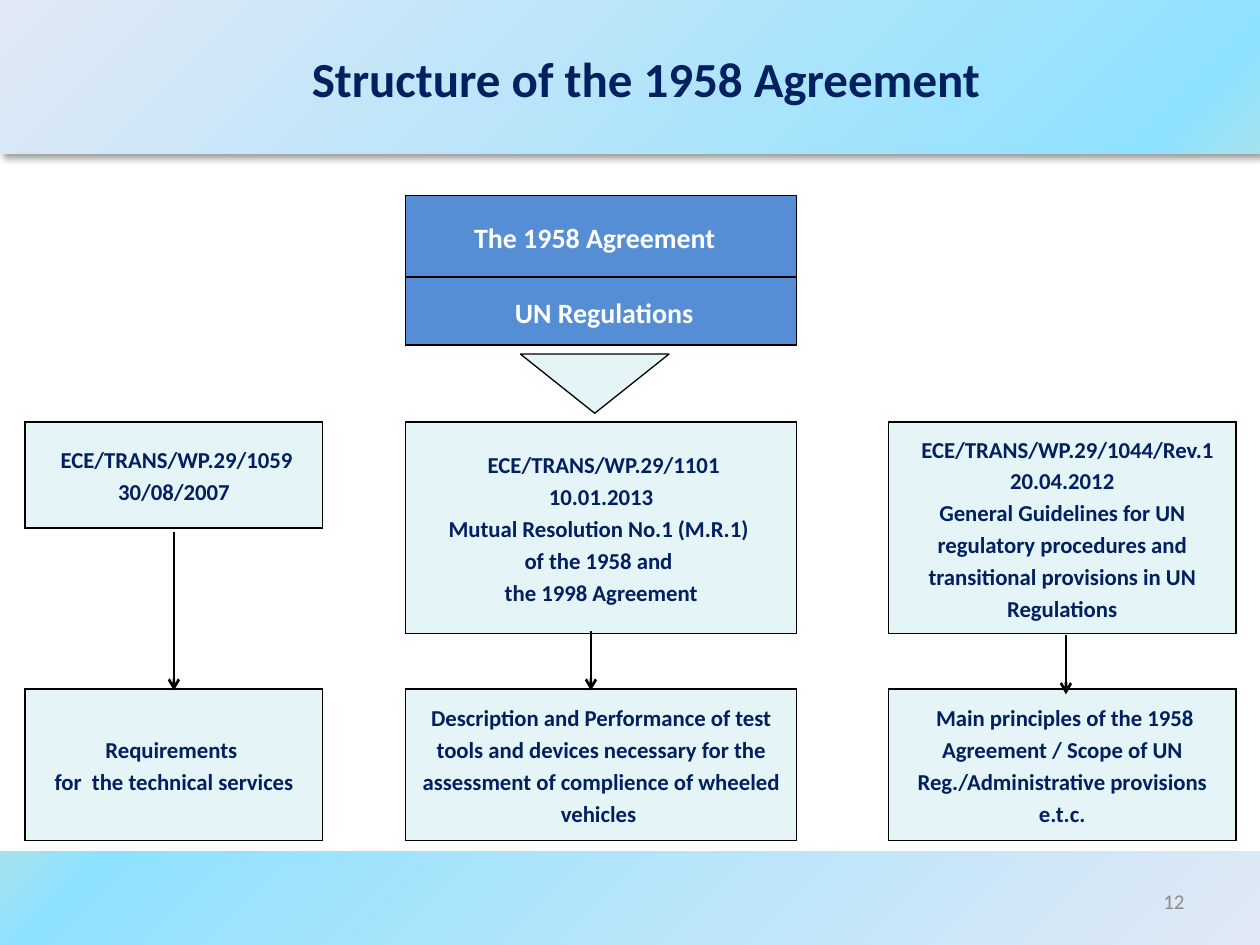
"""Build the slide on the structure of the 1958 Agreement."""
from dataclasses import dataclass

from pptx import Presentation
from pptx.dml.color import RGBColor
from pptx.enum.shapes import MSO_CONNECTOR, MSO_SHAPE
from pptx.enum.text import MSO_ANCHOR, PP_ALIGN
from pptx.oxml import parse_xml
from pptx.oxml.ns import qn
from pptx.util import Inches, Pt


@dataclass(frozen=True)
class Theme:
    font: str = "Calibri"
    navy: str = "002060"
    white: str = "FFFFFF"
    gray: str = "8C8C8C"
    black: str = "000000"
    blue: str = "558ED5"
    pale: str = "E5F4F7"
    stops: tuple = ((0, "A4E2EE"), (8, "8FE2FF"), (100, "E1E8F5"))
    title: int = 28
    head: int = 16
    body: int = 13
    small: int = 12


theme = Theme()


def put(frame, text, size=theme.body, color=theme.navy, bold=True,
        align=PP_ALIGN.CENTER, space=None):
    frame.word_wrap = True
    frame.vertical_anchor = MSO_ANCHOR.MIDDLE
    for n, line in enumerate(text.split("\n")):
        para = frame.add_paragraph() if n else frame.paragraphs[0]
        para.alignment = align
        para.line_spacing = space
        run = para.add_run()
        run.text = line
        run.font.name = theme.font
        run.font.size = Pt(size)
        run.font.bold = bold
        run.font.color.rgb = RGBColor.from_string(color)


def node(tag, attrs="", inner=""):
    space = "http://schemas.openxmlformats.org/drawingml/2006/main"
    return parse_xml(f'<a:{tag} xmlns:a="{space}" {attrs}>{inner}</a:{tag}>')


deck = Presentation()
deck.slide_width, deck.slide_height = Inches(10), Inches(7.5)
slide = deck.slides.add_slide(deck.slide_layouts[6])
shapes = slide.shapes

stops = "".join(f'<a:gs pos="{at * 1000}"><a:srgbClr val="{color}"/></a:gs>'
                for at, color in theme.stops)
bands = []
for top, high, focus in ((0, 1.22, 'l="100000" t="100000"'),
                         (6.76, 0.76, 'r="100000" b="100000"')):
    band = shapes.add_shape(MSO_SHAPE.RECTANGLE, 0, Inches(top), Inches(10), Inches(high))
    band.shadow.inherit = False
    band.line.fill.background()
    band.fill.background()
    props = band.element.spPr
    fade = node("gradFill", 'rotWithShape="1"',
                f'<a:gsLst>{stops}</a:gsLst>'
                f'<a:path path="circle"><a:fillToRect {focus}/></a:path>')
    props.replace(props.find(qn("a:noFill")), fade)
    bands.append(props)
bands[0].find(qn("a:effectLst")).append(node(
    "outerShdw", f'blurRad="{Pt(4)}" dist="{Pt(3)}" dir="2700000" algn="tl" rotWithShape="0"',
    f'<a:srgbClr val="{theme.black}"><a:alpha val="40000"/></a:srgbClr>'))

title = shapes.add_textbox(Inches(0.67), Inches(0.22), Inches(9), Inches(0.79))
put(title.text_frame, "Structure of the 1958 Agreement ", size=theme.title)
number = shapes.add_textbox(Inches(7.17), Inches(6.95), Inches(2.33), Inches(0.4))
put(number.text_frame, "12", size=theme.small, color=theme.gray, bold=False,
    align=PP_ALIGN.RIGHT)

wide = (2.36, 0.66, 3.1, 0.73, 2.76)
tall = (0.65, 0.54, 0.61, 0.84, 0.84, 0.44, 1.2)
table = shapes.add_table(len(tall), len(wide), Inches(0.2), Inches(1.55),
                         Inches(sum(wide)), Inches(sum(tall))).table
table.first_row = table.horz_banding = False
style = table._tbl.tblPr.find(qn("a:tableStyleId"))
style.text = "{2D5ABB26-0587-4C30-8999-92F81FD0307C}"
for col, size in zip(table.columns, wide):
    col.width = Inches(size)
for row, size in zip(table.rows, tall):
    row.height = Inches(size)

boxes = {
    (0, 2): "The 1958 Agreement  ",
    (1, 2): " UN Regulations",
    (3, 0): " ECE/TRANS/WP.29/1059\n30/08/2007",
    (3, 2): " ECE/TRANS/WP.29/1101\n10.01.2013\nMutual Resolution No.1 (M.R.1) \n"
            "of the 1958 and \nthe 1998 Agreement",
    (3, 4): "  ECE/TRANS/WP.29/1044/Rev.1\n20.04.2012\nGeneral Guidelines for UN regulatory "
            "procedures and transitional provisions in UN Regulations",
    (6, 0): " Requirements  \nfor  the technical services",
    (6, 2): "Description and Performance of test tools and devices necessary for the "
            "assessment of complience of wheeled vehicles ",
    (6, 4): " Main principles of the 1958 Agreement / Scope of UN "
            "Reg./Administrative provisions e.t.c.",
}
edge = f'<a:solidFill><a:srgbClr val="{theme.black}"/></a:solidFill>'
for (row, col), text in boxes.items():
    top = row < 2
    cell = table.cell(row, col)
    parts = [cell]
    if row == 3 and col:
        parts.append(table.cell(row + 1, col))
        cell.merge(parts[1])
    for part in parts:
        props = part._tc.get_or_add_tcPr()
        for side in "LRTB":
            props.append(node(f"ln{side}", f'w="{Pt(1)}"', edge))
        part.fill.solid()
        part.fill.fore_color.rgb = RGBColor.from_string(theme.blue if top else theme.pale)
    cell.margin_left = cell.margin_right = Inches(0.06)
    cell.margin_top = cell.margin_bottom = 0
    put(cell.text_frame, text, size=theme.head if top else theme.body,
        color=theme.white if top else theme.navy, space=1.15)
    cell.vertical_anchor = MSO_ANCHOR.MIDDLE

for x, top, end in ((4.69, 5.01, 5.48), (8.46, 5.04, 5.51), (1.38, 4.22, 5.48)):
    arrow = shapes.add_connector(MSO_CONNECTOR.STRAIGHT, Inches(x), Inches(top),
                                 Inches(x), Inches(end))
    arrow.line.color.rgb = RGBColor.from_string(theme.black)
    arrow.line.width = Pt(1.5)
    arrow.line._get_or_add_ln().append(node("tailEnd", 'type="arrow"'))
    arrow.element.spPr.append(node("effectLst"))

wedge = shapes.add_shape(MSO_SHAPE.ISOSCELES_TRIANGLE, Inches(4.13), Inches(2.81),
                         Inches(1.18), Inches(0.47))
wedge.rotation = 180
wedge.shadow.inherit = False
wedge.fill.solid()
wedge.fill.fore_color.rgb = RGBColor.from_string(theme.pale)
wedge.line.color.rgb = RGBColor.from_string(theme.black)
wedge.line.width = Pt(0.75)

deck.save("out.pptx")
